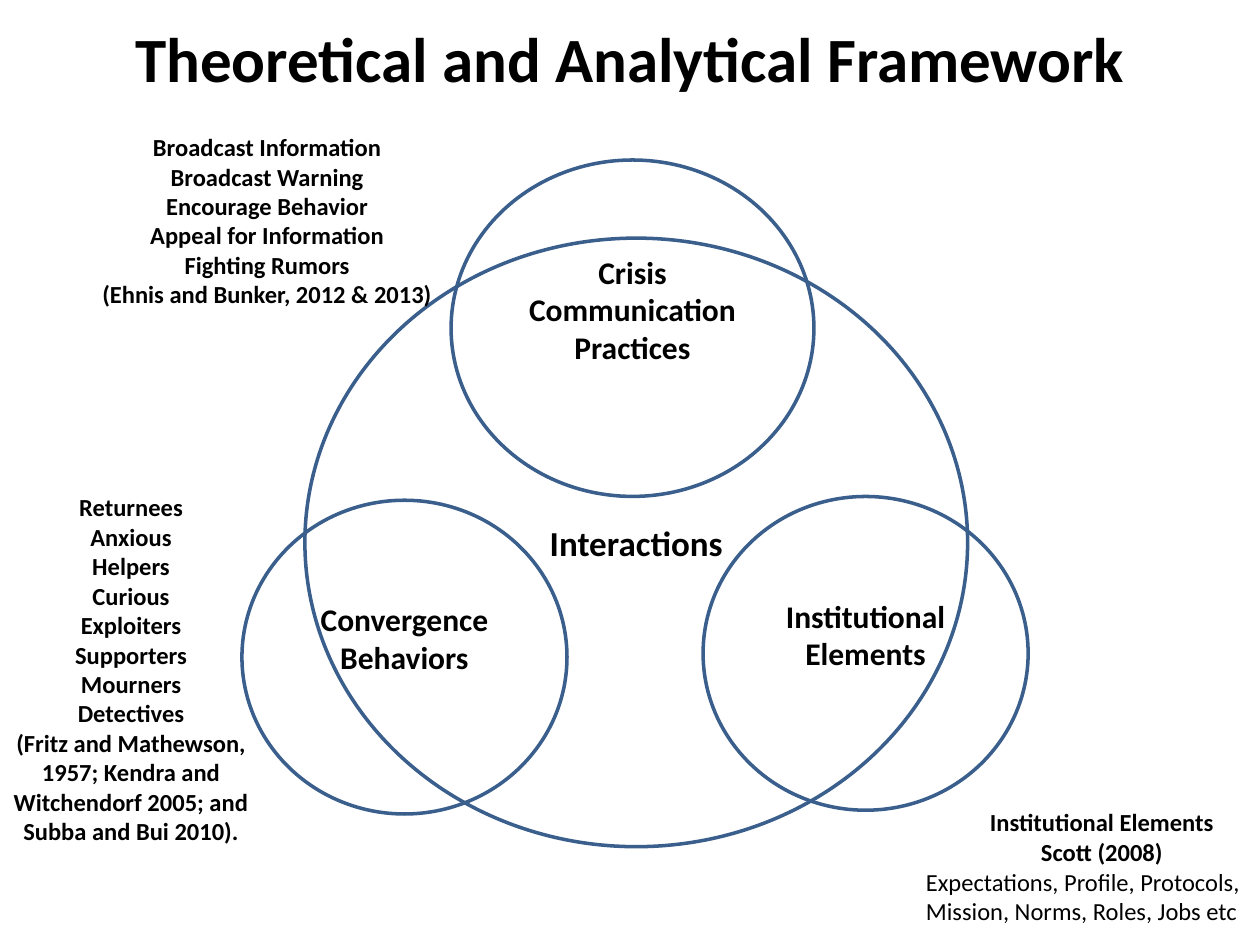
from pptx import Presentation
from pptx.dml.color import RGBColor
from pptx.enum.shapes import MSO_SHAPE
from pptx.enum.text import MSO_ANCHOR, PP_ALIGN
from pptx.util import Inches, Pt

BLACK = RGBColor(0x00, 0x00, 0x00)
BLUE = RGBColor(0x3A, 0x5F, 0x8C)
ELLIPSE = MSO_SHAPE.OVAL
MIDDLE, TOP = MSO_ANCHOR.MIDDLE, MSO_ANCHOR.TOP
CENTER, LEFT = PP_ALIGN.CENTER, PP_ALIGN.LEFT

TITLE = "Theoretical and Analytical Framework"
LABEL_LIFT = 0.35

CIRCLES = [
    ("Interactions", (2.42, 1.89, 5.26, 4.83), 20, 0.05),
    ("Convergence Behaviors", (1.92, 3.97, 2.58, 2.49), 18, LABEL_LIFT),
    ("Crisis Communication Practices", (3.58, 1.27, 2.88, 2.67), 18, LABEL_LIFT),
    ("Institutional Elements", (5.58, 3.94, 2.58, 2.49), 18, LABEL_LIFT),
]

CONVERGENCE_ROLES = [
    "Returnees", "Anxious", "Helpers", "Curious",
    "Exploiters", "Supporters", "Mourners", "Detectives",
    "(Fritz and Mathewson, 1957; Kendra and Witchendorf 2005; and Subba and Bui 2010).",
]
COMMUNICATION_PRACTICES = [
    "Broadcast Information", "Broadcast Warning", "Encourage Behavior",
    "Appeal for Information", "Fighting Rumors", "(Ehnis and Bunker, 2012 & 2013)",
]
INSTITUTIONAL_SOURCE = ["Institutional Elements", "Scott (2008)"]
INSTITUTIONAL_EXAMPLES = ["Expectations, Profile, Protocols, Mission, Norms, Roles, Jobs etc"]


def write_lines(frame, lines, size, bold=True, align=CENTER, anchor=TOP):
    """Fill a text frame with one paragraph per line in a single style."""
    frame.word_wrap = True
    frame.vertical_anchor = anchor
    font_format = {"name": "Calibri", "size": Pt(size), "bold": bold}
    for index, line in enumerate(lines):
        paragraph = frame.add_paragraph() if index else frame.paragraphs[0]
        paragraph.alignment = align
        run = paragraph.add_run()
        run.text = line
        for attribute, value in font_format.items():
            setattr(run.font, attribute, value)
        run.font.color.rgb = BLACK


def add_note(slide, lines, box, size=14, **style):
    """Add a text box holding the given lines."""
    note = slide.shapes.add_textbox(*map(Inches, box))
    write_lines(note.text_frame, lines, size, **style)


def add_circle(slide, label, box, size, bottom_inset):
    """Add an outlined ellipse with its label, lifted by the bottom inset."""
    circle = slide.shapes.add_shape(ELLIPSE, *map(Inches, box))
    circle.shadow.inherit = False
    circle.fill.background()
    circle.line.color.rgb = BLUE
    circle.line.width = Pt(2)
    circle.text_frame.margin_bottom = Inches(bottom_inset)
    write_lines(circle.text_frame, [label], size, anchor=MIDDLE)


def main():
    """Build the framework slide and save it."""
    presentation = Presentation()
    presentation.slide_width = Inches(10)
    presentation.slide_height = Inches(7.5)
    slide = presentation.slides.add_slide(presentation.slide_layouts[6])

    add_note(slide, [TITLE], (0.5, -0.17, 9, 1.25), size=36, anchor=MIDDLE)
    for circle in CIRCLES:
        add_circle(slide, *circle)
    add_note(slide, CONVERGENCE_ROLES, (-0.17, 3.86, 2.42, 2.93))
    add_note(slide, COMMUNICATION_PRACTICES, (0.62, 1, 3, 1.51))
    add_note(slide, INSTITUTIONAL_SOURCE, (7.62, 6.36, 2.25, 0.57))
    add_note(slide, INSTITUTIONAL_EXAMPLES, (7.25, 6.83, 3.17, 0.57), bold=False, align=LEFT)

    presentation.save("out.pptx")


if __name__ == "__main__":
    main()
